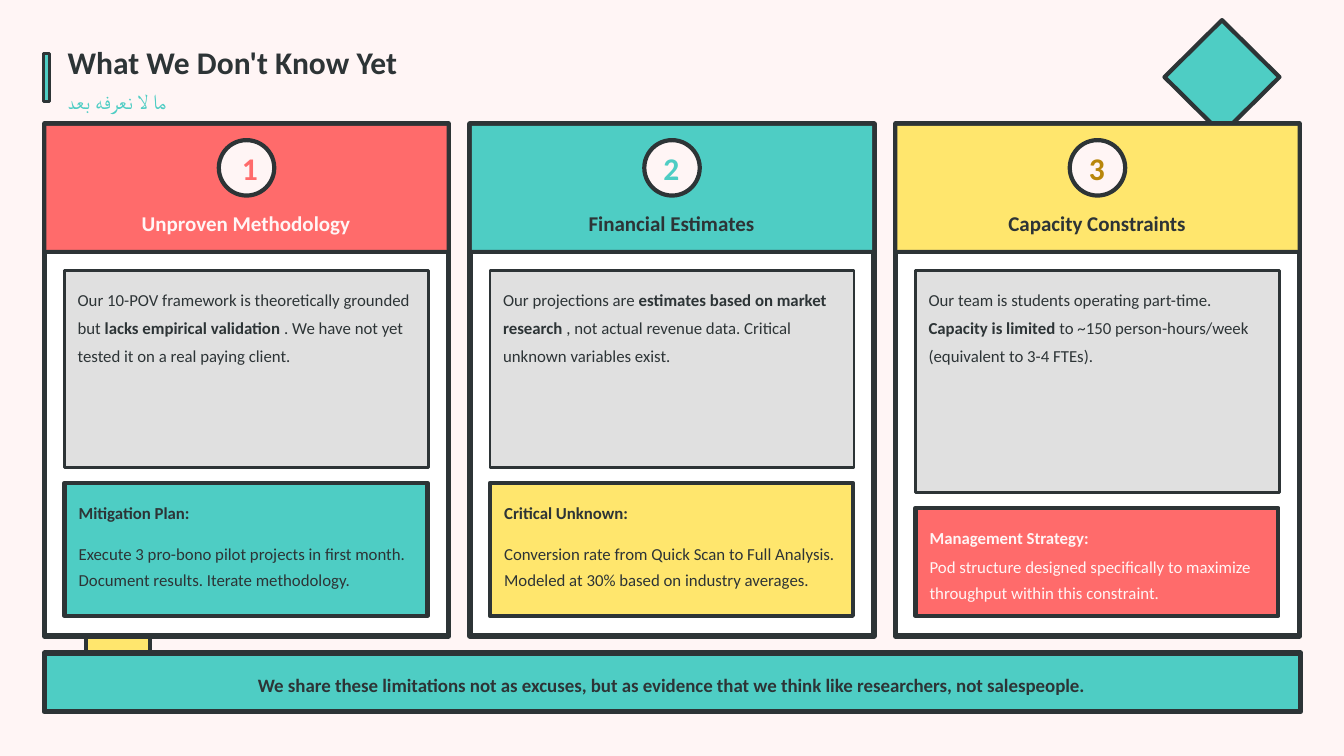
from pptx import Presentation
from pptx.dml.color import RGBColor as Rgb
from pptx.enum.shapes import MSO_SHAPE as Kind
from pptx.enum.text import MSO_ANCHOR as Anchor, MSO_AUTO_SIZE as Auto, PP_ALIGN as Align
from pptx.util import Inches, Pt

HUES = {"ink": "2D3436", "pale": "FFF5F5", "teal": "4ECDC4", "coral": "FF6B6B",
        "sun": "FFE66D", "gold": "B8860B", "grey": "E0E0E0", "white": "FFFFFF"}

CARDS = [
    dict(hue="coral", num="1", num_hue="coral", num_x=1.96, head="Unproven Methodology", head_hue="pale",
         body="Our 10-POV framework is theoretically grounded but **lacks empirical validation** . "
              "We have not yet tested it on a real paying client.",
         top=4.79, fill="teal", hue2="ink", label="Mitigation Plan:",
         note="Execute 3 pro-bono pilot projects in first month. Document results. Iterate methodology."),
    dict(hue="teal", num="2", num_hue="teal", num_x=1.92, head="Financial Estimates", head_hue="ink",
         body="Our projections are **estimates based on market research** , not actual revenue data. "
              "Critical unknown variables exist.",
         top=4.79, fill="sun", hue2="ink", label="Critical Unknown:",
         note="Conversion rate from Quick Scan to Full Analysis. Modeled at 30% based on industry averages."),
    dict(hue="sun", num="3", num_hue="gold", num_x=1.92, head="Capacity Constraints", head_hue="ink",
         body="Our team is students operating part-time. **Capacity is limited** "
              "to ~150 person-hours/week (equivalent to 3-4 FTEs).",
         top=5.04, fill="coral", hue2="pale", label="Management Strategy:",
         note="Pod structure designed specifically to maximize throughput within this constraint."),
]


def write(frame, text, size=12, hue="ink", bold=False, font="Calibri", align=Align.LEFT, lead=1.0):
    frame.word_wrap = True
    frame.auto_size = Auto.NONE
    frame.vertical_anchor = Anchor.MIDDLE
    frame.margin_left = frame.margin_right = frame.margin_top = frame.margin_bottom = 0
    para = frame.paragraphs[0]
    para.alignment, para.line_spacing = align, lead
    for i, part in enumerate(text.split("**")):
        run = para.add_run()
        run.text = part
        run.font.name, run.font.size = font, Pt(size)
        run.font.bold = bold or i % 2 == 1
        run.font.color.rgb = Rgb.from_string(HUES[hue])


class Deck:
    """Holds the style and the current slide."""

    def __init__(self):
        self.file = Presentation()
        self.file.slide_width, self.file.slide_height = Inches(13.33), Inches(7.5)
        self.slide = self.file.slides.add_slide(self.file.slide_layouts[5])
        self.paint(self.slide.background.fill, "pale")

    def paint(self, fill, hue):
        fill.solid()
        fill.fore_color.rgb = Rgb.from_string(HUES[hue])

    def title(self, x, y, w, h, text, **style):
        box = self.slide.shapes.title
        box.left, box.top, box.width, box.height = map(Inches, (x, y, w, h))
        write(box.text_frame, text, **style)

    def shape(self, x, y, w, h, hue, line=0, kind=Kind.RECTANGLE):
        item = self.slide.shapes.add_shape(kind, *map(Inches, (x, y, w, h)))
        item.shadow.inherit = False
        self.paint(item.fill, hue)
        if line:
            self.paint(item.line.fill, "ink")
            item.line.width = Pt(line)
        else:
            item.line.fill.background()

    def text(self, x, y, w, h, text, **style):
        box = self.slide.shapes.add_textbox(*map(Inches, (x, y, w, h)))
        write(box.text_frame, text, **style)

    def card(self, x, hue, num, num_hue, num_x, head, head_hue, body, top, fill, hue2, label, note):
        self.shape(x, 1.23, 4.01, 5.08, "white", 4)
        self.shape(x + 0.02, 1.25, 3.97, 1.23, hue)
        self.shape(x + 0.02, 2.48, 3.97, 0.04, "ink")
        self.shape(x + 1.73, 1.39, 0.55, 0.55, "pale", 3, Kind.OVAL)
        self.text(x + num_x, 1.48, 0.32, 0.38, num, size=22.5, hue=num_hue, bold=True)
        self.text(x + 0.09, 2.04, 3.82, 0.29, head, size=15, hue=head_hue, bold=True,
                  align=Align.CENTER, lead=1.2)
        self.shape(x + 0.2, 2.68, 3.61, top - 2.83, "grey", 2)
        self.text(x + 0.33, 2.81, 3.43, 0.81, body, lead=1.4)
        self.shape(x + 0.2, top, 3.6, 6.11 - top, fill, 3)
        self.text(x + 0.34, top + 0.14, 3.41, 0.25, label, hue=hue2, bold=True, lead=1.3)
        self.text(x + 0.34, top + 0.43, 3.41, 5.54 - top, note, hue=hue2, lead=1.3)


def main():
    deck = Deck()
    deck.shape(11.55, 0.2, 1.14, 1.13, "teal", 3, Kind.DIAMOND)
    deck.shape(0.85, 6.02, 0.64, 0.64, "sun", 3)
    deck.shape(0.43, 0.53, 0.06, 0.48, "teal", 2)
    deck.title(0.67, 0.42, 3.52, 0.38, "What We Don't Know Yet", size=22.5, bold=True)
    deck.text(0.67, 0.83, 3.47, 0.29, "ما لا نعرفه بعد", size=15, hue="teal", font="Roboto", lead=1.2)
    for i, card in enumerate(CARDS):
        deck.card(0.44 + 4.22 * i, **card)
    deck.shape(0.44, 6.48, 12.46, 0.58, "teal", 4)
    deck.text(0.74, 6.62, 11.84, 0.29,
              "We share these limitations not as excuses, but as evidence that we think like "
              "researchers, not salespeople.", size=13.5, bold=True, align=Align.CENTER, lead=1.3)
    deck.file.save("out.pptx")


if __name__ == "__main__":
    main()
